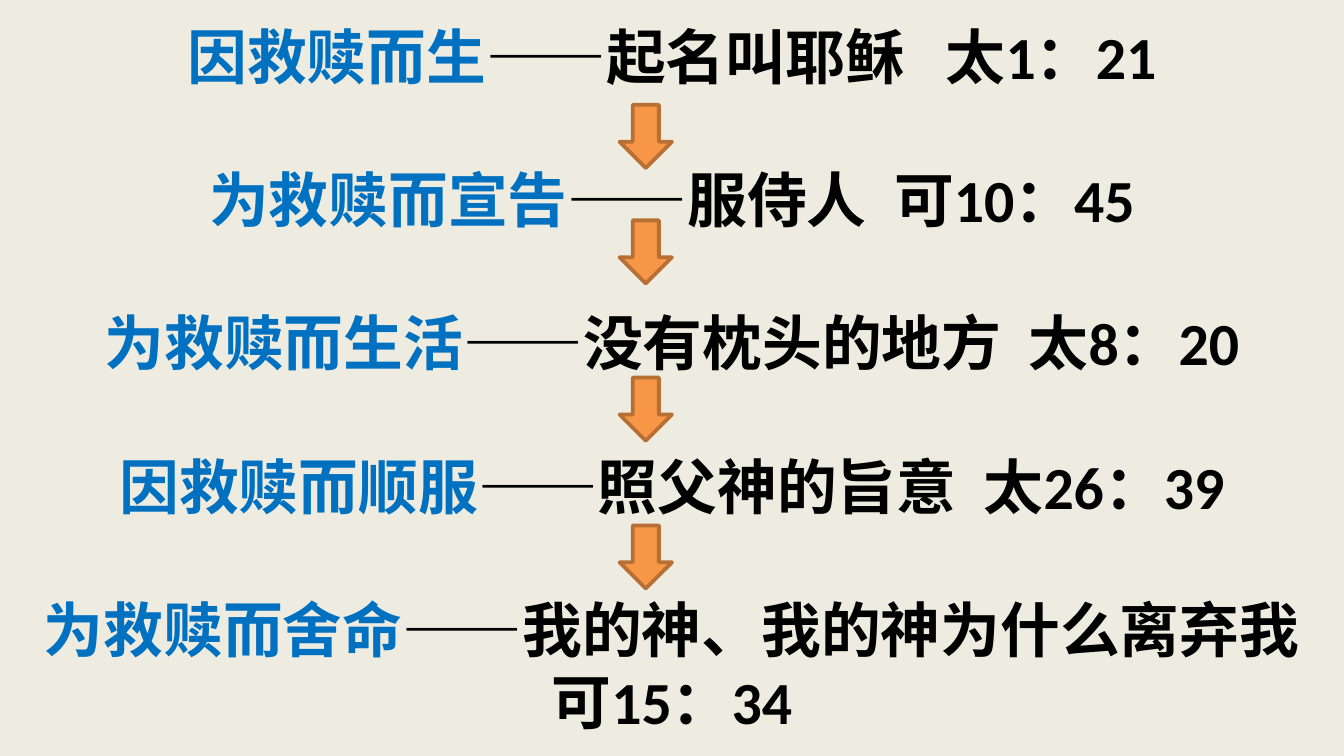
from pptx import Presentation
from pptx.dml.color import RGBColor
from pptx.enum.shapes import MSO_SHAPE as Shape
from pptx.enum.text import MSO_ANCHOR as Anchor, PP_ALIGN as Align
from pptx.util import Inches, Pt

BACKGROUND = RGBColor(0xEE, 0xEC, 0xE1)
BLUE = RGBColor(0x00, 0x70, 0xC0)
BLACK = RGBColor(0x00, 0x00, 0x00)
ORANGE = RGBColor(0xF7, 0x96, 0x46)
BROWN = RGBColor(0xB7, 0x6F, 0x34)

WIDE_GAP = 1450
NARROW_GAP = 720
VERSES = [
    ("因救赎而生", "——起名叫耶稣", WIDE_GAP, "太1：21"),
    ("为救赎而宣告", "——服侍人", NARROW_GAP, "可10：45"),
    ("为救赎而生活", "——没有枕头的地方", NARROW_GAP, "太8：20"),
    ("因救赎而顺服", "——照父神的旨意", NARROW_GAP, "太26：39"),
    ("为救赎而舍命", "——我的神、我的神为什么离弃我", WIDE_GAP, "可15：34"),
]
ARROW_TOPS = [0.78, 1.64, 2.81, 3.91]

presentation = Presentation()
presentation.slide_width = Inches(10)
presentation.slide_height = Inches(10 * 9 / 16)
slide = presentation.slides.add_slide(presentation.slide_layouts[6])
slide.background.fill.solid()
slide.background.fill.fore_color.rgb = BACKGROUND

verse_box = slide.shapes.add_textbox(
    0, 0, presentation.slide_width, presentation.slide_height
)
text_frame = verse_box.text_frame
text_frame.word_wrap = True
text_frame.vertical_anchor = Anchor.MIDDLE

for index, (theme, verse, gap, reference) in enumerate(VERSES):
    paragraph = text_frame.add_paragraph() if index else text_frame.paragraphs[0]
    paragraph.alignment = Align.CENTER
    if index:
        paragraph.space_before = Pt(38.4)
    for text, color, spacing in (
        (theme, BLUE, 0),
        (verse, BLACK, 0),
        (" ", BLACK, gap),
        (reference, BLACK, 0),
    ):
        run = paragraph.add_run()
        run.text = text
        run.font.name = "Calibri"
        run.font.size = Pt(32)
        run.font.bold = True
        run.font.color.rgb = color
        if spacing:
            run._r.get_or_add_rPr().set("spc", str(spacing))

for top in ARROW_TOPS:
    arrow = slide.shapes.add_shape(
        Shape.DOWN_ARROW, Inches(4.61), Inches(top), Inches(0.39), Inches(0.47)
    )
    arrow.shadow.inherit = False
    arrow.fill.solid()
    arrow.fill.fore_color.rgb = ORANGE
    arrow.line.color.rgb = BROWN
    arrow.line.width = Pt(2)

presentation.save("out.pptx")
